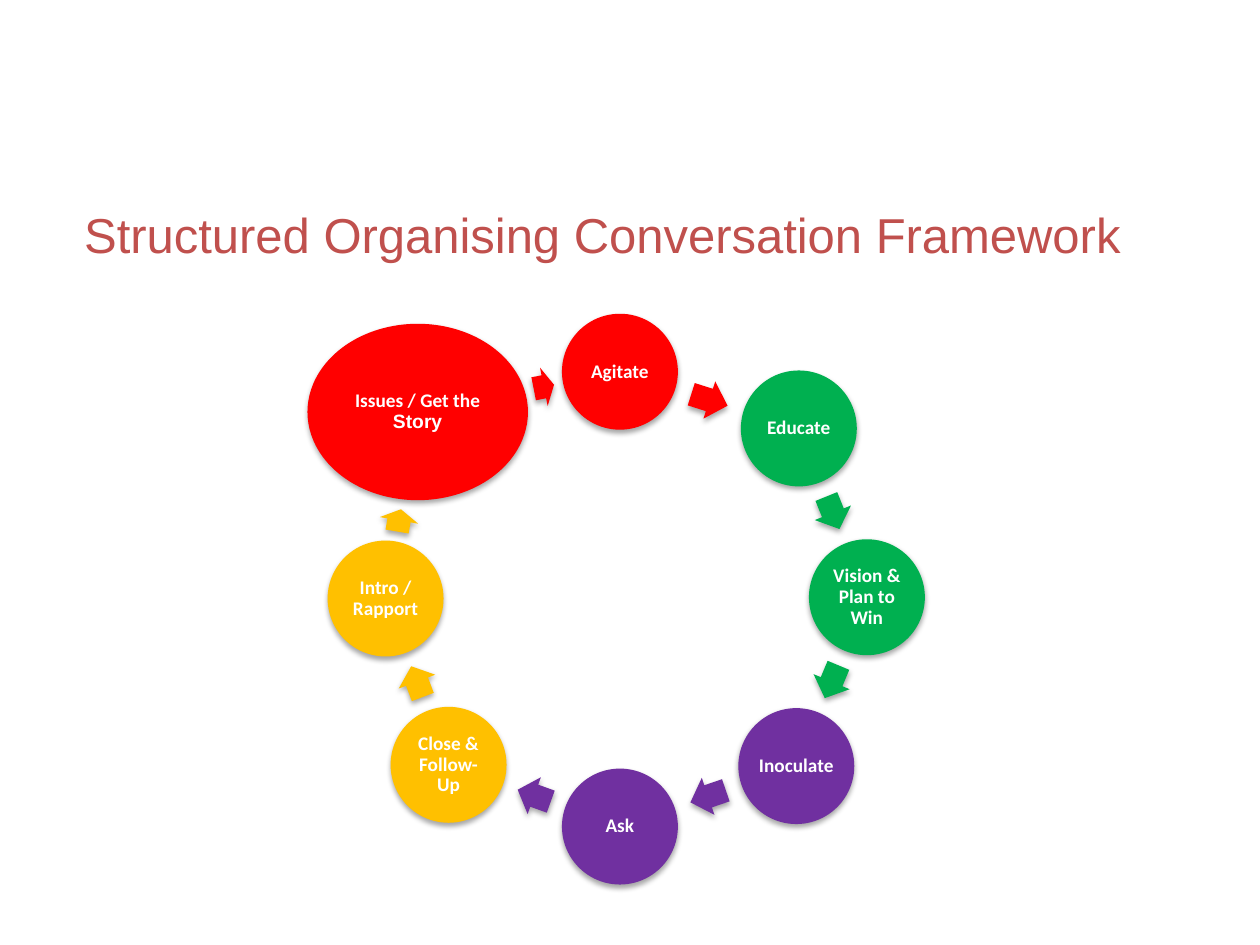
from math import atan2, cos, degrees, hypot, sin
from lxml.etree import SubElement
from pptx import Presentation
from pptx.dml.color import RGBColor
from pptx.enum.shapes import MSO_SHAPE
from pptx.enum.text import MSO_ANCHOR, PP_ALIGN
from pptx.oxml.ns import qn
from pptx.util import Inches, Pt

COLORS = {
    "title": "C0504D",
    "red": "FF0000",
    "green": "00B050",
    "purple": "7030A0",
    "amber": "FFC000",
    "white": "FFFFFF",
    "shadow": "000000",
}
SIZE = 0.92
ARROW_RATIO = 0.53
ARROW_WIDTH = 0.31

STEPS = [
    (4.46, 2.49, SIZE, SIZE, "red", [("Agitate", "Calibri")]),
    (5.88, 2.94, SIZE, SIZE, "green", [("Educate", "Calibri")]),
    (6.42, 4.28, SIZE, SIZE, "green", [("Vision & Plan to Win", "Calibri")]),
    (5.86, 5.62, SIZE, SIZE, "purple", [("Inoculate", "Calibri")]),
    (4.46, 6.1, SIZE, SIZE, "purple", [("Ask", "Calibri")]),
    (3.1, 5.61, SIZE, SIZE, "amber", [("Close & Follow-Up", "Calibri")]),
    (2.6, 4.29, SIZE, SIZE, "amber", [("Intro / Rapport", "Calibri")]),
    (2.44, 2.57, 1.75, 1.4, "red",
     [("Issues / Get the ", "Calibri"), ("Story", "Arial")]),
]


def rgb(name):
    return RGBColor.from_string(COLORS[name])


def add_run(para, text, font, size, color, bold=False):
    run = para.add_run()
    run.text = text
    run.font.name = font
    run.font.size = Pt(size)
    run.font.bold = bold
    run.font.color.rgb = rgb(color)


def set_frame(frame, inset):
    frame.word_wrap = True
    frame.vertical_anchor = MSO_ANCHOR.MIDDLE
    frame.margin_left = frame.margin_right = Inches(inset)
    frame.margin_top = frame.margin_bottom = Inches(inset)
    para = frame.paragraphs[0]
    para.alignment = PP_ALIGN.CENTER
    return para


def add_shadow(shape):
    shape.shadow.inherit = False
    effects = shape._element.spPr.find(qn("a:effectLst"))
    outer = SubElement(effects, qn("a:outerShdw"), blurRad=str(Pt(3.1)),
                       dist=str(Pt(1.8)), dir="5400000", rotWithShape="0")
    color = SubElement(outer, qn("a:srgbClr"), val=COLORS["shadow"])
    SubElement(color, qn("a:alpha"), val="35000")


def add_solid(slide, kind, left, top, width, height, color):
    shape = slide.shapes.add_shape(
        kind, Inches(left), Inches(top), Inches(width), Inches(height))
    shape.fill.solid()
    shape.fill.fore_color.rgb = rgb(color)
    shape.line.fill.background()
    add_shadow(shape)
    return shape


def add_title(slide, text):
    box = slide.shapes.add_textbox(
        Inches(0.28), Inches(1.23), Inches(9), Inches(1.25))
    add_run(set_frame(box.text_frame, 0.05), text, "Arial", 28, "title")


def add_step(slide, step):
    *place, color, runs = step
    oval = add_solid(slide, MSO_SHAPE.OVAL, *place, color)
    para = set_frame(oval.text_frame, 0.02)
    para.line_spacing = 0.9
    for text, font in runs:
        add_run(para, text, font, 11, "white", True)


def reach(step, angle):
    width, height = step[2:4]
    return 0.5 / hypot(cos(angle) / width, sin(angle) / height)


def add_arrow(slide, start, end):
    x, y = start[0] + start[2] / 2, start[1] + start[3] / 2
    dx = end[0] + end[2] / 2 - x
    dy = end[1] + end[3] / 2 - y
    angle = atan2(dy, dx)
    near = reach(start, angle)
    far = hypot(dx, dy) - reach(end, angle)
    length = ARROW_RATIO * (far - near)
    mid = (near + far) / 2
    arrow = add_solid(
        slide, MSO_SHAPE.RIGHT_ARROW,
        x + mid * cos(angle) - length / 2,
        y + mid * sin(angle) - ARROW_WIDTH / 2,
        length, ARROW_WIDTH, start[4])
    arrow.adjustments[0] = 0.6
    arrow.adjustments[1] = 0.5
    arrow.rotation = degrees(angle) % 360


def main():
    deck = Presentation()
    deck.slide_width = Inches(10)
    deck.slide_height = Inches(7.5)
    slide = deck.slides.add_slide(deck.slide_layouts[6])
    add_title(slide, "Structured Organising Conversation Framework")
    for start, end in zip(STEPS, STEPS[1:] + STEPS[:1]):
        add_step(slide, start)
        add_arrow(slide, start, end)
    deck.save("out.pptx")


if __name__ == "__main__":
    main()
